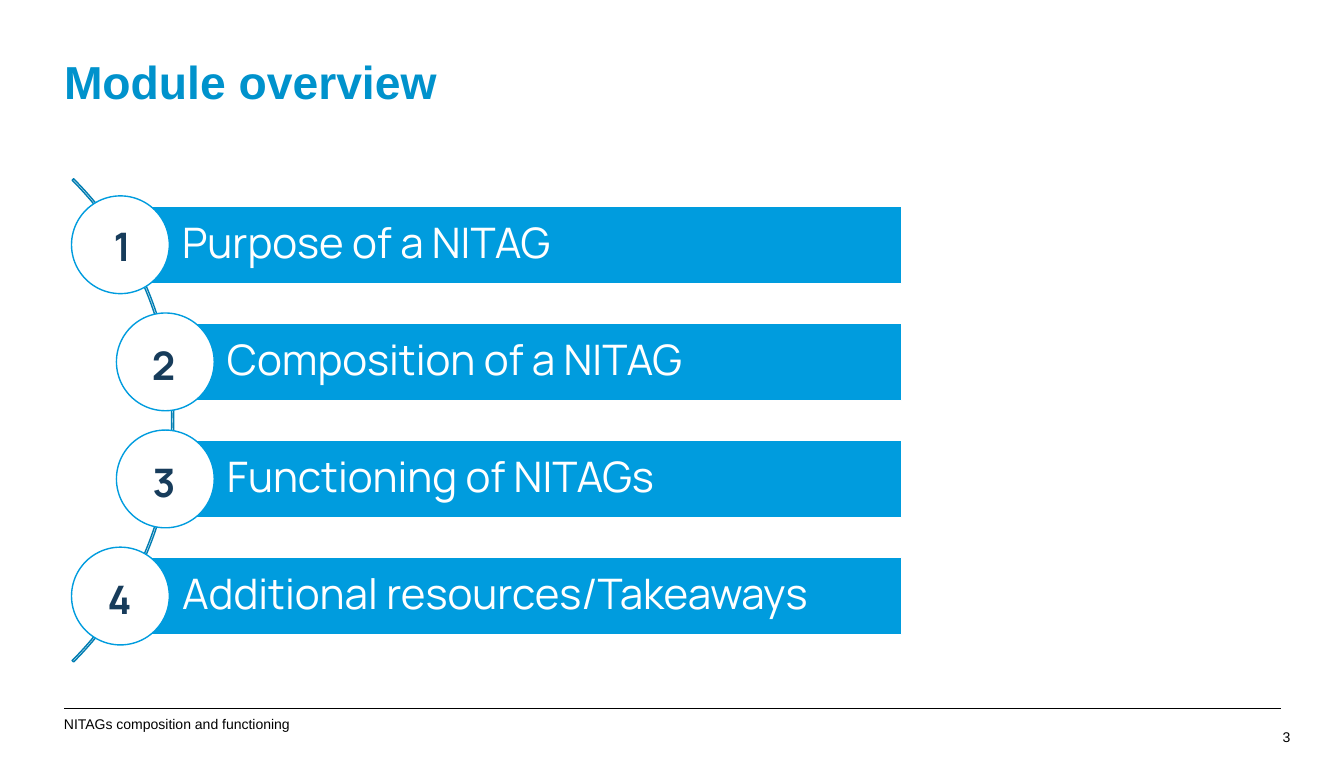
import pptx
import pptx.dml.color
import pptx.enum.shapes
import pptx.enum.text
import pptx.oxml.ns
import pptx.util
from lxml import etree

Cm = pptx.util.Cm
Pt = pptx.util.Pt
SHAPES = pptx.enum.shapes.MSO_SHAPE
ALIGN = pptx.enum.text.PP_ALIGN
ANCHOR = pptx.enum.text.MSO_ANCHOR

MARGIN_LEFT = 1.61
CIRCLE_SIZE = 2.46
BAR_HEIGHT = 1.95
MIDDLE_INDENT = 1.13

# Topic, indent of its row, offset of the number inside its circle
TOPICS = [
    ("Purpose of a NITAG", 0, (0.81, 0.53)),
    ("Composition of a NITAG", MIDDLE_INDENT, (0.64, 0.58)),
    ("Functioning of NITAGs", MIDDLE_INDENT, (0.66, 0.58)),
    ("Additional resources/Takeaways", 0, (0.66, 0.58)),
]


def color(hex_string):
    return pptx.dml.color.RGBColor.from_string(hex_string)


def write_text(shape, text, size, hex_color, font="Arial", bold=False, align=ALIGN.LEFT,
               anchor=ANCHOR.TOP, insets=(0, 0, 0, 0), line_spacing=None, wrap=True):
    """Fill a shape with one paragraph; insets are left, top, right, bottom in cm."""
    frame = shape.text_frame
    frame.auto_size = pptx.enum.text.MSO_AUTO_SIZE.NONE
    frame.word_wrap = wrap
    frame.vertical_anchor = anchor
    frame.margin_left, frame.margin_top, frame.margin_right, frame.margin_bottom = map(Cm, insets)
    paragraph = frame.paragraphs[0]
    paragraph.alignment = align
    paragraph.line_spacing = line_spacing
    run = paragraph.add_run()
    run.text = text
    run.font.name = font
    run.font.size = Pt(size)
    run.font.bold = bold
    run.font.color.rgb = color(hex_color)


def add_text(slide, left, top, width, height, text, **text_format):
    box = slide.shapes.add_textbox(Cm(left), Cm(top), Cm(width), Cm(height))
    write_text(box, text, **text_format)


def add_outlined_shape(slide, kind, left, top, width, height, fill, line):
    shape = slide.shapes.add_shape(kind, Cm(left), Cm(top), Cm(width), Cm(height))
    shape.shadow.inherit = False
    if fill:
        shape.fill.solid()
        shape.fill.fore_color.rgb = color(fill)
    else:
        shape.fill.background()
    shape.line.color.rgb = color(line)
    shape.line.width = Pt(1)
    return shape


def add_title(slide, left, top, width, height):
    title = slide.shapes.title
    title.left, title.top, title.width, title.height = map(Cm, (left, top, width, height))
    write_text(title, "Module overview", size=33, hex_color="0092CC", bold=True, line_spacing=0.9)


def add_footer(slide, left, top, width):
    line = slide.shapes.add_connector(pptx.enum.shapes.MSO_CONNECTOR.STRAIGHT,
                                      Cm(left), Cm(top), Cm(left + width), Cm(top))
    line.line.color.rgb = color("000000")
    line.line.width = Pt(0.75)
    etree.SubElement(line._element.spPr, pptx.oxml.ns.qn("a:effectLst"))
    add_text(slide, left, top + 0.18, 21, 0.3, "NITAGs composition and functioning",
             size=10, hex_color="000000")
    add_text(slide, left + width - 0.57, top + 0.51, 0.81, 0.51, "3",
             size=10, hex_color="000000", align=ALIGN.RIGHT)


def add_arc(slide, right, middle, size):
    """Draw the thin quarter arc whose full circle ends at right, centred on middle."""
    arc = add_outlined_shape(slide, SHAPES.BLOCK_ARC, right - size, middle - size / 2,
                             size, size, None, "007DB2")
    for index, value in enumerate((189, 27, 0.003)):
        arc.adjustments[index] = value


def add_topic(slide, left, top, width, number, topic, number_offset):
    bar_left = left + CIRCLE_SIZE / 2
    bar = add_outlined_shape(slide, SHAPES.RECTANGLE, bar_left,
                             top + (CIRCLE_SIZE - BAR_HEIGHT) / 2,
                             width - CIRCLE_SIZE / 2, BAR_HEIGHT, "009CDE", "FFFFFF")
    write_text(bar, topic, size=30, hex_color="FFFFFF", font="Manrope", anchor=ANCHOR.MIDDLE,
               insets=(1.55, 0.2, 0.2, 0.2), line_spacing=0.9)
    add_outlined_shape(slide, SHAPES.OVAL, left, top, CIRCLE_SIZE, CIRCLE_SIZE,
                       "FFFFFF", "009CDE")
    add_text(slide, left + number_offset[0], top + number_offset[1], 1.47, 1.45, str(number),
             size=28, hex_color="173C5B", font="Manrope", bold=True,
             insets=(0.25, 0.13, 0.25, 0.13))


def add_topic_list(slide, left, top, width, height):
    add_arc(slide, left + 2.57, top + height / 2, 17.2)
    pitch = (height - CIRCLE_SIZE) / (len(TOPICS) - 1)
    for row, (topic, indent, number_offset) in enumerate(TOPICS):
        add_topic(slide, left + indent, top + row * pitch, width - indent,
                  row + 1, topic, number_offset)


def main():
    presentation = pptx.Presentation()
    presentation.slide_width = Cm(33.81)
    presentation.slide_height = Cm(19.1)
    slide = presentation.slides.add_slide(presentation.slide_layouts.get_by_name("Title Only"))
    add_title(slide, MARGIN_LEFT, 1.5, 14.1, 1.12)
    add_topic_list(slide, 1.8, 4.93, 20.88, 11.3)
    add_footer(slide, MARGIN_LEFT, 17.82, 30.61)
    presentation.save("out.pptx")


if __name__ == "__main__":
    main()
